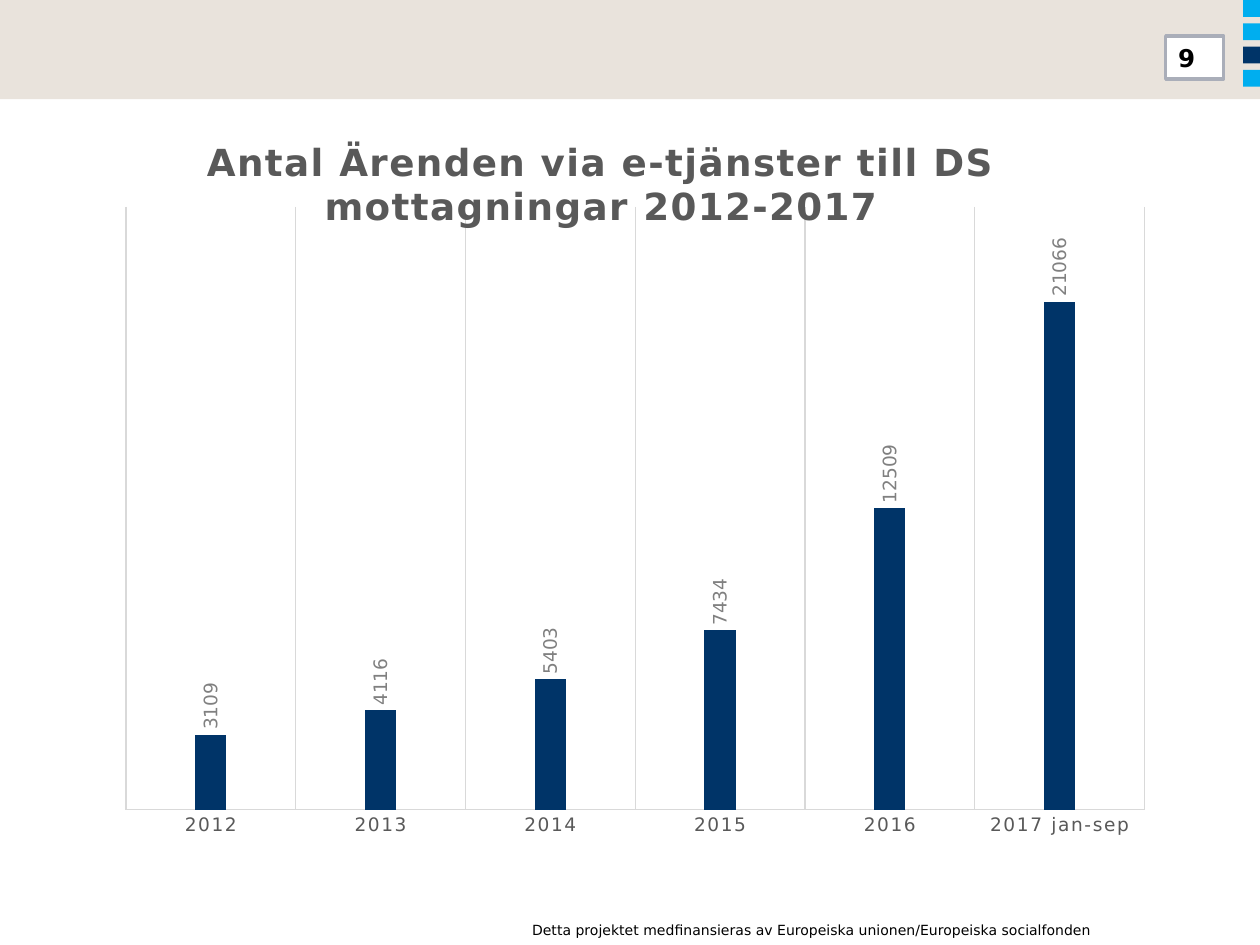
from lxml.etree import SubElement
from pptx import Presentation
from pptx.chart.data import CategoryChartData
from pptx.dml.color import RGBColor
from pptx.enum.chart import XL_CHART_TYPE, XL_LABEL_POSITION, XL_TICK_MARK
from pptx.enum.shapes import MSO_SHAPE
from pptx.enum.text import MSO_ANCHOR, PP_ALIGN
from pptx.oxml import parse_xml
from pptx.oxml.ns import nsdecls, qn
from pptx.util import Cm, Pt

FONT = "DejaVu Sans"
BLACK = RGBColor(0x00, 0x00, 0x00)
WHITE = RGBColor(0xFF, 0xFF, 0xFF)
BEIGE = RGBColor(0xE9, 0xE3, 0xDC)
CYAN = RGBColor(0x00, 0xAE, 0xEF)
NAVY = RGBColor(0x00, 0x34, 0x68)
BORDER = RGBColor(0xAA, 0xAE, 0xB9)
DARK_GREY = RGBColor(0x59, 0x59, 0x59)
LABEL_GREY = RGBColor(0x80, 0x80, 0x80)
GRID_GREY = RGBColor(0xD9, 0xD9, 0xD9)

CASES = {
    "2012": 3109,
    "2013": 4116,
    "2014": 5403,
    "2015": 7434,
    "2016": 12509,
    "2017 jan-sep": 21066,
}


def format_font(font, size, color, bold=False):
    font.name = FONT
    font.size = Pt(size)
    font.bold = bold
    font.color.rgb = color


def format_line(line, color, width):
    line.color.rgb = color
    line.width = Pt(width)


def add_rectangle(slide, left, top, width, height, fill):
    shape = slide.shapes.add_shape(
        MSO_SHAPE.RECTANGLE, Cm(left), Cm(top), Cm(width), Cm(height))
    shape.shadow.inherit = False
    shape.fill.solid()
    shape.fill.fore_color.rgb = fill
    shape.line.fill.background()
    return shape


def write_text(shape, text, size, alignment, bold=False):
    frame = shape.text_frame
    frame.word_wrap = True
    frame.vertical_anchor = MSO_ANCHOR.MIDDLE
    paragraph = frame.paragraphs[0]
    paragraph.alignment = alignment
    run = paragraph.add_run()
    run.text = text
    format_font(run.font, size, BLACK, bold)


def place_chart_part(element, index, **fractions):
    """Give a chart part a manual layout in fractions of the chart area."""
    for old_layout in element.findall(qn("c:layout")):
        element.remove(old_layout)
    layout = parse_xml(f"<c:layout {nsdecls('c')}/>")
    manual = SubElement(layout, qn("c:manualLayout"))
    if "w" in fractions:
        SubElement(manual, qn("c:layoutTarget")).set("val", "inner")
    for name in ("x", "y"):
        SubElement(manual, qn(f"c:{name}Mode")).set("val", "edge")
    for name, value in fractions.items():
        SubElement(manual, qn(f"c:{name}")).set("val", str(value))
    element.insert(index, layout)


def format_chart_title(chart, text):
    chart.has_title = True
    title = chart.chart_title
    paragraph = title.text_frame.paragraphs[0]
    run = paragraph.add_run()
    run.text = text
    format_font(run.font, 21.3, DARK_GREY, bold=True)
    run.font._element.set("spc", "100")
    place_chart_part(title._element, 1, x=0.09, y=0.09)
    title._element.find(qn("c:overlay")).set("val", "1")


def format_axes(chart):
    categories = chart.category_axis
    categories.major_tick_mark = XL_TICK_MARK.NONE
    categories.minor_tick_mark = XL_TICK_MARK.NONE
    categories.has_major_gridlines = True
    format_line(categories.major_gridlines.format.line, GRID_GREY, 0.75)
    format_line(categories.format.line, GRID_GREY, 0.75)
    font = categories.tick_labels.font
    format_font(font, 10.6, DARK_GREY)
    font._element.set("spc", "100")

    values = chart.value_axis
    values.minimum_scale = 0
    values.maximum_scale = 25000
    values.has_major_gridlines = False
    values.visible = False


def format_columns(plot):
    plot.gap_width = 444
    plot.overlap = -90
    plot.vary_by_categories = False
    series = plot.series[0]
    series.format.fill.solid()
    series.format.fill.fore_color.rgb = NAVY
    labels = series.data_labels
    labels.show_value = True
    labels.position = XL_LABEL_POSITION.OUTSIDE_END
    format_font(labels.font, 10.6, LABEL_GREY)
    body = labels._element.find(qn("c:txPr")).find(qn("a:bodyPr"))
    body.set("rot", "-5400000")
    body.set("vert", "horz")


def add_case_chart(slide):
    data = CategoryChartData()
    data.categories = list(CASES)
    data.add_series("Series 1", list(CASES.values()))
    chart = slide.shapes.add_chart(
        XL_CHART_TYPE.COLUMN_CLUSTERED,
        Cm(2.11), Cm(1.22), Cm(21.39), Cm(15.95), data).chart
    format_font(chart.font, 10, BLACK)
    chart.has_legend = False
    format_chart_title(
        chart, "Antal Ärenden via e-tjänster till DS mottagningar 2012-2017")
    format_axes(chart)
    format_columns(chart.plots[0])
    plot_area = chart._chartSpace.chart.plotArea
    place_chart_part(plot_area, 0, x=0.02, y=0.185, w=0.96, h=0.762)


def main():
    presentation = Presentation()
    presentation.slide_width = Cm(25.4)
    presentation.slide_height = Cm(19.05)
    slide = presentation.slides.add_slide(presentation.slide_layouts[6])

    add_rectangle(slide, 0, 0, 25.4, 2, BEIGE)
    for index, color in enumerate((CYAN, CYAN, NAVY, CYAN)):
        add_rectangle(slide, 25.06, index * 0.47, 0.34, 0.34, color)

    footer = slide.shapes.add_textbox(Cm(10.19), Cm(18.44), Cm(12.07), Cm(0.61))
    write_text(
        footer,
        "Detta projektet medfinansieras av Europeiska unionen/Europeiska socialfonden",
        8, PP_ALIGN.RIGHT)

    add_case_chart(slide)

    number_box = add_rectangle(slide, 23.5, 0.73, 1.17, 0.86, WHITE)
    format_line(number_box.line, BORDER, 2)
    write_text(number_box, "9", 14, PP_ALIGN.LEFT, bold=True)

    presentation.save("out.pptx")


if __name__ == "__main__":
    main()
